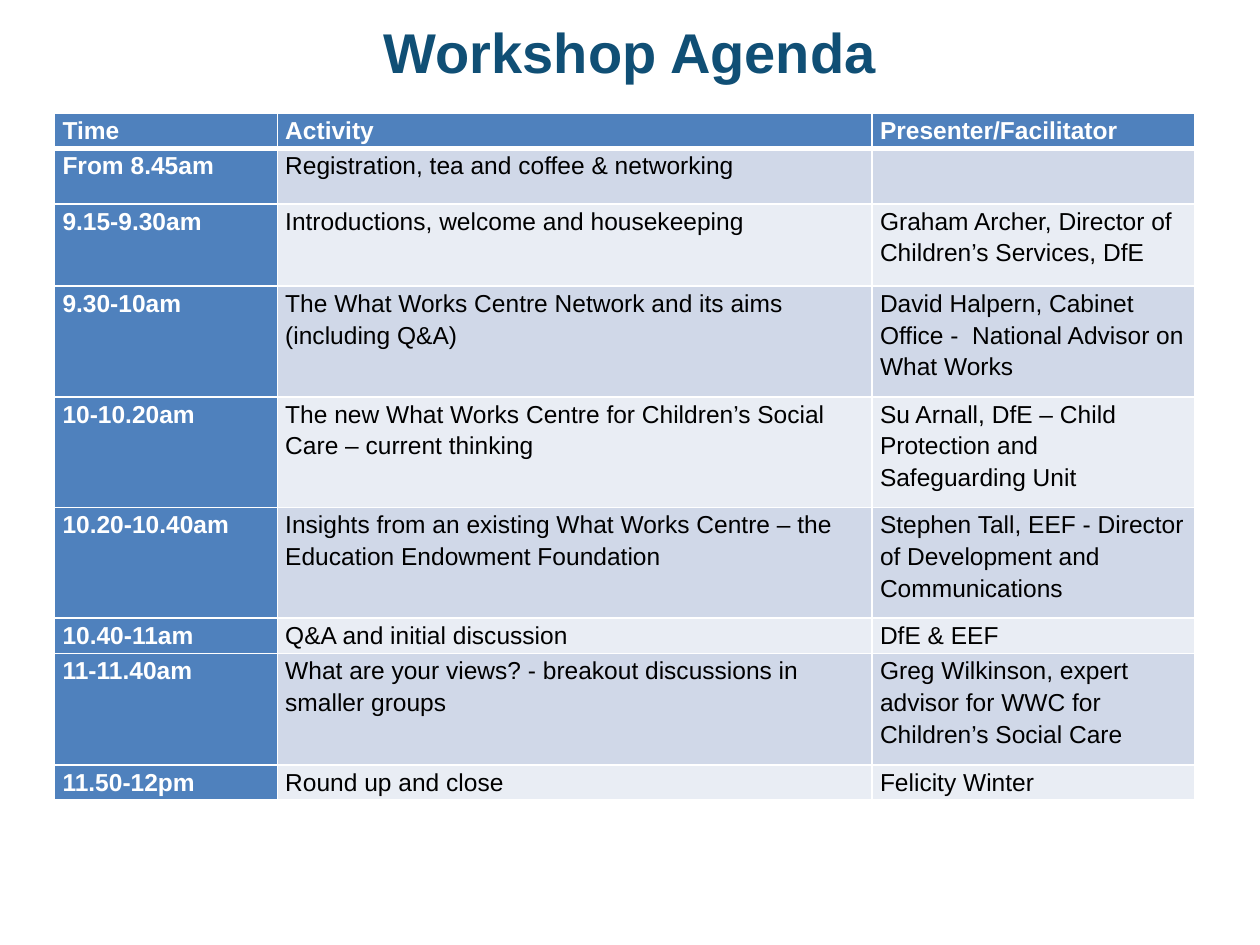
"""Build the workshop agenda slide with its timetable."""
from lxml import etree
from pptx import Presentation
from pptx.dml.color import RGBColor
from pptx.enum.text import MSO_ANCHOR, PP_ALIGN
from pptx.oxml.ns import qn
from pptx.util import Cm, Pt

CENTER, LEFT = PP_ALIGN.CENTER, PP_ALIGN.LEFT
MIDDLE, TOP = MSO_ANCHOR.MIDDLE, MSO_ANCHOR.TOP
BLUE, WHITE, BLACK, NAVY = "4F81BD", "FFFFFF", "000000", "104F75"
BANDS = ["E9EDF4", "D0D8E8"]

COLUMN_WIDTHS = [4.49, 11.99, 6.5]
ROW_HEIGHTS = [0.71, 1.12, 1.66, 2.23, 2.23, 2.23, 0.71, 2.25, 0.71]
AGENDA = [
    ("Time", "Activity", "Presenter/Facilitator"),
    ("From 8.45am", "Registration, tea and coffee & networking", ""),
    ("9.15-9.30am", "Introductions, welcome and housekeeping",
     "Graham Archer, Director of Children’s Services, DfE"),
    ("9.30-10am", "The What Works Centre Network and its aims (including Q&A)",
     "David Halpern, Cabinet Office -  National Advisor on What Works"),
    ("10-10.20am", "The new What Works Centre for Children’s Social Care – current thinking",
     "Su Arnall, DfE – Child Protection and Safeguarding Unit"),
    ("10.20-10.40am", "Insights from an existing What Works Centre – the Education Endowment Foundation",
     "Stephen Tall, EEF - Director of Development and Communications"),
    ("10.40-11am", "Q&A and initial discussion", "DfE & EEF"),
    ("11-11.40am", "What are your views? - breakout discussions in smaller groups",
     "Greg Wilkinson, expert advisor for WWC for Children’s Social Care"),
    ("11.50-12pm", "Round up and close", "Felicity Winter"),
]


def write_text(frame, text, size=14, color=BLACK, bold=False, align=LEFT, spacing=1.15):
    frame.word_wrap = True
    para = frame.paragraphs[0]
    para.alignment = align
    para.line_spacing = spacing
    para.font.size = Pt(size)
    if text:
        span = para.add_run()
        span.text = text
        span.font.name = "Arial"
        span.font.size = Pt(size)
        span.font.bold = bold
        span.font.color.rgb = RGBColor.from_string(color)


def add_border(cell, side, width):
    properties = cell._tc.get_or_add_tcPr()
    line = etree.Element(qn(f"a:ln{side}"), w=str(Pt(width)))
    fill = etree.SubElement(line, qn("a:solidFill"))
    etree.SubElement(fill, qn("a:srgbClr"), val=WHITE)
    properties.insert("LRTB".index(side), line)


deck = Presentation()
deck.slide_width, deck.slide_height = Cm(25.4), Cm(19.05)
slide = deck.slides.add_slide(deck.slide_layouts[6])

title_box = slide.shapes.add_textbox(Cm(1.9), Cm(0.13), Cm(21.6), Cm(1.8))
title_box.text_frame.vertical_anchor = MIDDLE
write_text(title_box.text_frame, "Workshop Agenda", size=32, color=NAVY,
           bold=True, align=CENTER, spacing=1.0)

table = slide.shapes.add_table(
    len(AGENDA), len(COLUMN_WIDTHS), Cm(1.1), Cm(2.28),
    Cm(sum(COLUMN_WIDTHS)), Cm(sum(ROW_HEIGHTS))).table
for column, width in zip(table.columns, COLUMN_WIDTHS):
    column.width = Cm(width)

for row_index, (entries, height) in enumerate(zip(AGENDA, ROW_HEIGHTS)):
    table.rows[row_index].height = Cm(height)
    for column_index, entry in enumerate(entries):
        cell = table.cell(row_index, column_index)
        heading = row_index == 0 or column_index == 0
        cell.margin_left = cell.margin_right = Cm(0.16)
        cell.margin_top = cell.margin_bottom = Cm(0)
        cell.vertical_anchor = TOP
        cell.fill.solid()
        cell.fill.fore_color.rgb = RGBColor.from_string(
            BLUE if heading else BANDS[row_index % 2])
        write_text(cell.text_frame, entry, color=WHITE if heading else BLACK, bold=heading)
        for side in "LRTB":
            below_header = (row_index, side) in [(0, "B"), (1, "T")]
            add_border(cell, side, 3 if below_header else 1)

deck.save("out.pptx")
